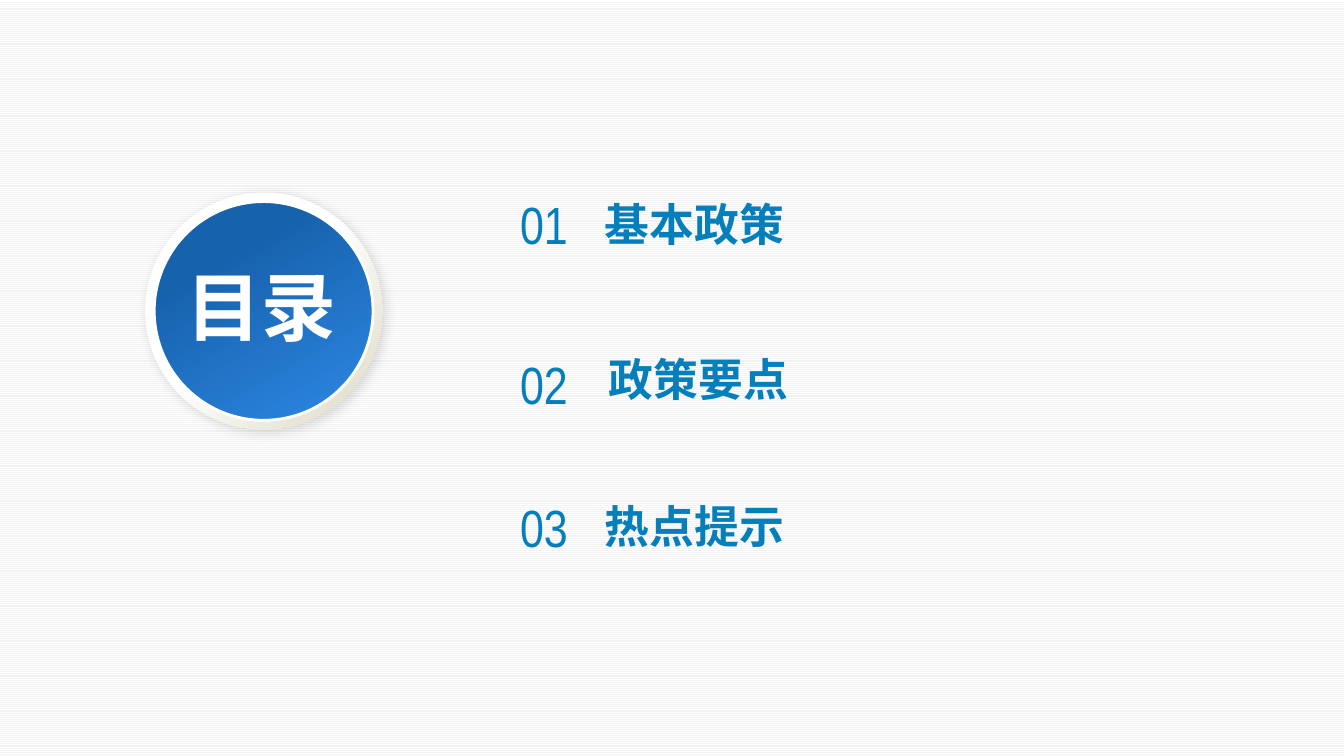
from dataclasses import dataclass

from lxml import etree
from pptx import Presentation
from pptx import util as u
from pptx.dml.color import RGBColor
from pptx.enum import dml, shapes, text
from pptx.oxml import ns


@dataclass(frozen=True)
class Theme:
    white: str = "FFFFFF"
    stripe: str = "F2F2F2"
    rim: str = "DDD9C3"
    disc_light: str = "2D88E3"
    disc_dark: str = "1762AD"
    accent: str = "047FBC"
    shadow: str = "000000"
    heading_font: str = "Noto Sans CJK SC"
    number_font: str = "Arial Narrow"
    title_size: float = 53.4
    number_size: float = 37.4
    item_size: float = 32


def add_xml(parent, tag, **attributes):
    values = {name: str(value) for name, value in attributes.items()}
    return etree.SubElement(parent, ns.qn(tag), values)


class AgendaSlide:
    def __init__(self, presentation, theme):
        self.theme = theme
        self.slide = presentation.slides.add_slide(presentation.slide_layouts[5])

    def background(self):
        fill = self.slide.background.fill
        fill.patterned()
        fill.pattern = dml.MSO_PATTERN.NARROW_HORIZONTAL
        fill.fore_color.rgb = RGBColor.from_string(self.theme.stripe)
        fill.back_color.rgb = RGBColor.from_string(self.theme.white)

    def circle(self, group, left, top, size, stops, angle, line_width=None):
        shape = group.shapes.add_shape(
            shapes.MSO_SHAPE.OVAL, *map(u.Inches, (left, top, size, size)))
        # Gradient stops are (percent, colour); the angle runs clockwise
        shape.fill.gradient()
        shape.fill.gradient_angle = 360 - angle
        stop_list = shape.element.spPr.find(".//" + ns.qn("a:gsLst"))
        for stop in list(stop_list):
            stop_list.remove(stop)
        for position, color in stops:
            stop = add_xml(stop_list, "a:gs", pos=position * 1000)
            add_xml(stop, "a:srgbClr", val=color)
        if line_width:
            shape.line.color.rgb = RGBColor.from_string(self.theme.white)
            shape.line.width = u.Pt(line_width)
        else:
            shape.line.fill.background()
        shape.shadow.inherit = False
        return shape

    def soft_shadow(self, shape):
        effects = shape.element.spPr.find(ns.qn("a:effectLst"))
        shadow = add_xml(effects, "a:outerShdw", blurRad=u.Pt(9), dist=u.Pt(3),
                         dir=45 * 60000, algn="tl", rotWithShape=0)
        color = add_xml(shadow, "a:srgbClr", val=self.theme.shadow)
        add_xml(color, "a:alpha", val=15000)

    def set_text(self, shape, wording, color, align, font_format):
        frame = shape.text_frame
        frame_format = {"word_wrap": True,
                        "vertical_anchor": text.MSO_ANCHOR.TOP,
                        "auto_size": text.MSO_AUTO_SIZE.SHAPE_TO_FIT_TEXT}
        for name, value in frame_format.items():
            setattr(frame, name, value)
        paragraph = frame.paragraphs[0]
        paragraph.alignment = align
        run = paragraph.add_run()
        run.text = wording
        for name, value in font_format.items():
            setattr(run.font, name, value)
        run.font.color.rgb = RGBColor.from_string(color)
        # East Asian typeface, next to the Latin one
        properties = run.font._element
        add_xml(properties, "a:ea", typeface=font_format["name"])

    def title(self, wording, left, top, width, height):
        shape = self.slide.shapes.title
        box = {"left": left, "top": top, "width": width, "height": height}
        for name, value in box.items():
            setattr(shape, name, u.Inches(value))
        self.slide.shapes.element.append(shape.element)  # in front of the badge
        self.set_text(shape, wording, self.theme.white, text.PP_ALIGN.CENTER,
                      {"name": self.theme.heading_font, "bold": True,
                       "size": u.Pt(self.theme.title_size)})

    def label(self, wording, box, align, font_format):
        shape = self.slide.shapes.add_textbox(*map(u.Inches, box))
        self.set_text(shape, wording, self.theme.accent, align, font_format)


def main():
    theme = Theme()
    presentation = Presentation()
    presentation.slide_width = u.Inches(13.33)
    presentation.slide_height = u.Inches(7.5)
    agenda = AgendaSlide(presentation, theme)
    agenda.background()

    # Round badge with the title
    badge = agenda.slide.shapes.add_group_shape()
    rim = agenda.circle(badge, 1.44, 1.91, 2.35,
                        [(0, theme.white), (46, theme.white), (100, theme.rim)], 45)
    agenda.soft_shadow(rim)
    agenda.circle(badge, 1.53, 2, 2.17,
                  [(0, theme.disc_light), (73, theme.disc_dark)], 240, line_width=2)
    agenda.title("目录", 1.44, 2.54, 2.31, 1)

    # Numbered agenda items: wording, number top, item left, top and width
    number_format = {"name": theme.number_font, "size": u.Pt(theme.number_size)}
    item_format = {"name": theme.heading_font, "bold": True,
                   "size": u.Pt(theme.item_size)}
    items = [("基本政策", 1.86, 5.9, 1.9, 6.97),
             ("政策要点", 3.44, 5.94, 3.44, 6.15),
             ("热点提示", 4.86, 5.9, 4.9, 6.97)]
    for number, (wording, number_top, left, top, width) in enumerate(items, 1):
        agenda.label(f"{number:02}", (4.96, number_top, 0.87, 0.73),
                     text.PP_ALIGN.CENTER, number_format)
        agenda.label(wording, (left, top, width, 0.64),
                     text.PP_ALIGN.LEFT, item_format)

    presentation.save("out.pptx")


if __name__ == "__main__":
    main()
